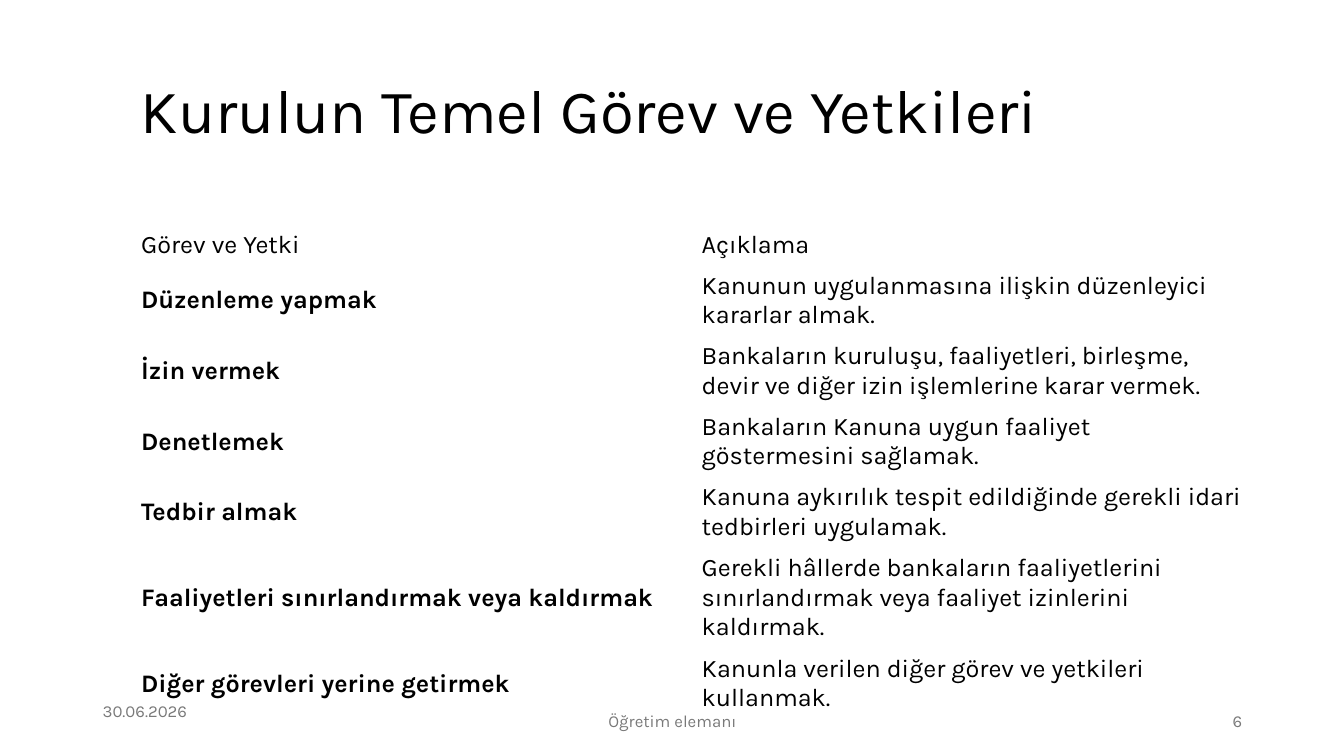
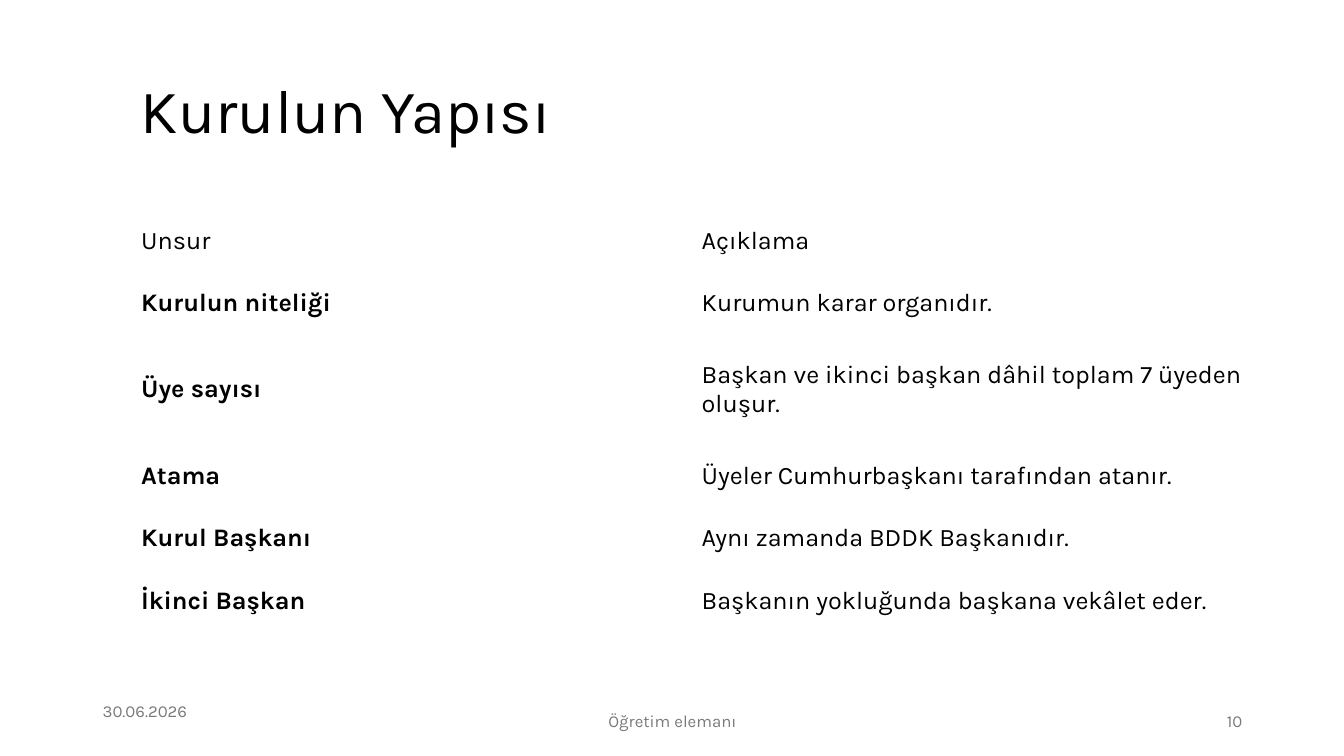
from pptx import Presentation
from pptx.dml.color import RGBColor
from pptx.enum import text
from pptx.util import Inches, Pt

SLIDES = [
    {
        "title": "Kurulun Temel Görev ve Yetkileri",
        "number": "6",
        "top": 2.23,
        "heights": [0.39, 0.68, 0.68, 0.68, 0.68, 0.97, 0.68],
        "rows": [
            ("Görev ve Yetki", "Açıklama"),
            ("Düzenleme yapmak", "Kanunun uygulanmasına ilişkin düzenleyici kararlar almak."),
            ("İzin vermek", "Bankaların kuruluşu, faaliyetleri, birleşme, devir ve diğer izin işlemlerine karar vermek."),
            ("Denetlemek", "Bankaların Kanuna uygun faaliyet göstermesini sağlamak."),
            ("Tedbir almak", "Kanuna aykırılık tespit edildiğinde gerekli idari tedbirleri uygulamak."),
            ("Faaliyetleri sınırlandırmak veya kaldırmak", "Gerekli hâllerde bankaların faaliyetlerini sınırlandırmak veya faaliyet izinlerini kaldırmak."),
            ("Diğer görevleri yerine getirmek", "Kanunla verilen diğer görev ve yetkileri kullanmak."),
        ],
    },
    {
        "title": "Kurulun Yapısı",
        "number": "10",
        "top": 2.08,
        "heights": [0.62, 0.62, 1.09, 0.62, 0.62, 0.62],
        "rows": [
            ("Unsur", "Açıklama"),
            ("Kurulun niteliği", "Kurumun karar organıdır."),
            ("Üye sayısı", "Başkan ve ikinci başkan dâhil toplam 7 üyeden oluşur."),
            ("Atama", "Üyeler Cumhurbaşkanı tarafından atanır."),
            ("Kurul Başkanı", "Aynı zamanda BDDK Başkanıdır."),
            ("İkinci Başkan", "Başkanın yokluğunda başkana vekâlet eder."),
        ],
    },
]
DATE = "30.06.2026"
AUTHOR = "Öğretim elemanı"
COLORS = {"text": "000000", "footer": "797979", "background": "FFFFFF"}
FONT = "Karla"
LEFT, WIDTH = 1.3, 11.12
ALIGN = text.PP_ALIGN


def write(tf, content, size=18, color="text", bold=False, align=ALIGN.LEFT, spacing=None):
    tf.word_wrap = True
    p = tf.paragraphs[0]
    p.alignment = align
    if spacing:
        p.line_spacing = spacing
    r = p.add_run()
    r.text = content
    r.font.name = FONT
    r.font.size = Pt(size)
    r.font.bold = bold
    r.font.color.rgb = RGBColor.from_string(COLORS[color])


def add_text(s, box, content, **style):
    tf = s.shapes.add_textbox(*map(Inches, box)).text_frame
    tf.vertical_anchor = text.MSO_ANCHOR.MIDDLE
    write(tf, content, **style)


def add_grid(s, top, heights, rows):
    columns = len(rows[0])
    table = s.shapes.add_table(
        len(rows), columns, Inches(LEFT), Inches(top), Inches(WIDTH), Inches(sum(heights))
    ).table
    table.first_row = table.horz_banding = False
    for column in table.columns:
        column.width = Inches(WIDTH / columns)
    for i, (height, row) in enumerate(zip(heights, rows)):
        table.rows[i].height = Inches(height)
        for j, content in enumerate(row):
            cell = table.cell(i, j)
            cell.fill.background()
            cell.vertical_anchor = text.MSO_ANCHOR.MIDDLE
            write(cell.text_frame, content, bold=i > 0 and j == 0)


def add_footer(s, number):
    for box, content, align in [
        ((0.92, 6.85, 3, 0.4), DATE, ALIGN.LEFT),
        ((4.42, 6.95, 4.5, 0.4), AUTHOR, ALIGN.CENTER),
        ((9.42, 6.95, 3, 0.4), number, ALIGN.RIGHT),
    ]:
        add_text(s, box, content, size=12, color="footer", align=align)


def main():
    prs = Presentation()
    prs.slide_width, prs.slide_height = Inches(13.33), Inches(7.5)
    fill = prs.slide_master.background.fill
    fill.solid()
    fill.fore_color.rgb = RGBColor.from_string(COLORS["background"])
    for content in SLIDES:
        s = prs.slides.add_slide(prs.slide_layouts[6])
        add_text(s, (LEFT, 0.4, WIDTH, 1.45), content["title"], size=44, spacing=0.9)
        add_grid(s, content["top"], content["heights"], content["rows"])
        add_footer(s, content["number"])
    prs.save("out.pptx")


if __name__ == "__main__":
    main()
